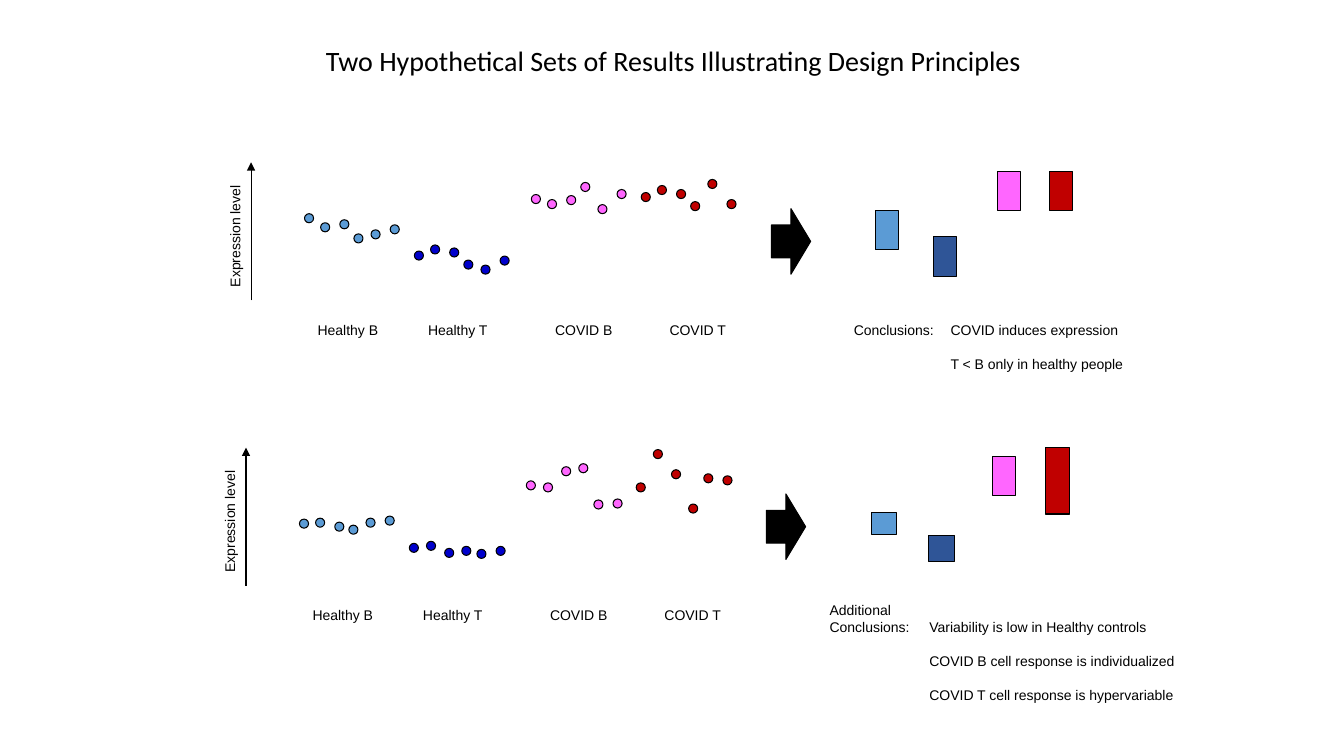
import pptx
import pptx.dml.color
import pptx.enum.shapes
import pptx.enum.text
import pptx.oxml.ns
import pptx.util
from lxml import etree

Inches = pptx.util.Inches
Pt = pptx.util.Pt
Shape = pptx.enum.shapes.MSO_SHAPE
Align = pptx.enum.text.PP_ALIGN
Anchor = pptx.enum.text.MSO_ANCHOR

COLORS = {
    "black": "000000",
    "light blue": "5B9BD5",
    "bright blue": "0000CC",
    "dark blue": "2F5597",
    "pink": "FF66FF",
    "red": "C00000",
}

# name, left of the first dot, centre of the label, dot colour, bar colour
GROUPS = [
    ("Healthy B", 0.53, 0.96, "light blue", "light blue"),
    ("Healthy T", 1.62, 2.05, "bright blue", "dark blue"),
    ("COVID B", 2.78, 3.30, "pink", "pink"),
    ("COVID T", 3.87, 4.43, "red", "red"),
]
EARLY_STEPS = (0, 0.16, 0.35, 0.49, 0.66, 0.85)
EVEN_STEPS = (0, 0.17, 0.35, 0.52, 0.67, 0.86)
DOT_SIZE = 0.09

# Every length in a panel is measured from the top of its axis.
PANELS = [
    {
        "origin": (2.49, 1.61),
        "steps": [EARLY_STEPS] * 4,
        "dots": [
            (0.51, 0.60, 0.57, 0.71, 0.67, 0.62),
            (0.88, 0.82, 0.85, 0.97, 1.02, 0.93),
            (0.32, 0.37, 0.33, 0.20, 0.42, 0.27),
            (0.30, 0.23, 0.27, 0.39, 0.17, 0.37),
        ],
        "bars": [
            (6.19, 0.48, 0.23, 0.39),
            (6.77, 0.74, 0.23, 0.39),
            (7.40, 0.09, 0.23, 0.39),
            (7.92, 0.09, 0.23, 0.39),
        ],
        "heading": (["Conclusions:"], 5.88, 1.53),
        "findings": (
            ["COVID induces expression", "T < B only in healthy people"],
            6.84, 1.53,
        ),
    },
    {
        "origin": (2.44, 4.44),
        "steps": [EARLY_STEPS] + [EVEN_STEPS] * 3,
        "dots": [
            (0.71, 0.70, 0.74, 0.77, 0.70, 0.68),
            (0.95, 0.93, 1.00, 0.98, 1.01, 0.98),
            (0.33, 0.35, 0.19, 0.16, 0.52, 0.51),
            (0.35, 0.02, 0.22, 0.56, 0.26, 0.28),
        ],
        "bars": [
            (6.20, 0.64, 0.25, 0.22),
            (6.77, 0.87, 0.26, 0.26),
            (7.40, 0.09, 0.23, 0.39),
            (7.93, 0, 0.24, 0.66),
        ],
        "heading": (["Additional", "Conclusions:"], 5.69, 1.48),
        "findings": (
            [
                "Variability is low in Healthy controls",
                "COVID B cell response is individualized",
                "COVID T cell response is hypervariable",
            ],
            6.68, 1.65,
        ),
    },
]


def color(name):
    return pptx.dml.color.RGBColor.from_string(COLORS[name])


def add_outlined(shapes, kind, box, fill):
    """Add a filled shape with a thin black outline."""
    shape = shapes.add_shape(kind, *map(Inches, box))
    shape.shadow.inherit = False
    shape.fill.solid()
    shape.fill.fore_color.rgb = color(fill)
    shape.line.color.rgb = color("black")
    shape.line.width = Pt(0.75)
    return shape


def add_text(shapes, lines, box, align=Align.LEFT, gap=0):
    """Add one paragraph per line, with gap points between them."""
    text_box = shapes.add_textbox(*map(Inches, box))
    frame = text_box.text_frame
    frame.word_wrap = True
    frame.text = "\n".join(lines)
    for index, para in enumerate(frame.paragraphs):
        para.alignment = align
        para.space_before = Pt(gap if index else 0)
        para.font.name = "Arial"
        para.font.size = Pt(10)
        para.font.color.rgb = color("black")
    return text_box


def add_axis(shapes, left, top):
    axis = shapes.add_connector(
        pptx.enum.shapes.MSO_CONNECTOR.STRAIGHT,
        Inches(left), Inches(top + 1.37), Inches(left), Inches(top))
    axis.line.color.rgb = color("black")
    axis.line.width = Pt(0.75)
    qn = pptx.oxml.ns.qn
    etree.SubElement(axis.line._get_or_add_ln(), qn("a:tailEnd"), type="triangle")
    etree.SubElement(axis._element.spPr, qn("a:effectLst"))
    caption = add_text(shapes, ["Expression level"],
                       (left - 0.77, top + 0.6, 1.22, 0.27), Align.CENTER)
    caption.rotation = 270


def add_dot_plot(shapes, panel, left, top):
    for group, steps, heights in zip(GROUPS, panel["steps"], panel["dots"]):
        name, start, center, dot_color, _ = group
        for step, height in zip(steps, heights):
            box = (left + start + step, top + height, DOT_SIZE, DOT_SIZE)
            add_outlined(shapes, Shape.OVAL, box, dot_color)
        add_text(shapes, [name], (left + center - 0.55, top + 1.53, 1.1, 0.27),
                 Align.CENTER)


def add_summary(shapes, panel, left, top):
    """Add the arrow, the range bars and the conclusions."""
    add_outlined(shapes, Shape.RIGHT_ARROW,
                 (left + 5.16, top + 0.46, 0.39, 0.65), "black")
    for group, (x, y, width, height) in zip(GROUPS, panel["bars"]):
        add_outlined(shapes, Shape.RECTANGLE,
                     (left + x, top + y, width, height), group[-1])
    heading, x, y = panel["heading"]
    add_text(shapes, heading, (left + x, top + y, 1.1, 0.1 + 0.17 * len(heading)))
    findings, x, y = panel["findings"]
    add_text(shapes, findings,
             (left + x, top + y, 2.8, 0.34 * len(findings) - 0.07), gap=12)


def add_panel(page, panel):
    shapes = page.shapes.add_group_shape().shapes
    left, top = panel["origin"]
    add_axis(shapes, left, top)
    add_dot_plot(shapes, panel, left, top)
    add_summary(shapes, panel, left, top)


def format_title(page, text):
    title = page.shapes.title
    title.left, title.top = Inches(2.43), Inches(0.38)
    title.width, title.height = Inches(8.5), Inches(0.55)
    frame = title.text_frame
    frame.text = text
    frame.word_wrap = True
    frame.vertical_anchor = Anchor.TOP
    para = frame.paragraphs[0]
    para.alignment = Align.CENTER
    para.font.name = "Calibri"
    para.font.size = Pt(20)
    para.font.color.rgb = color("black")


def main():
    deck = pptx.Presentation()
    deck.slide_width, deck.slide_height = Inches(13.33), Inches(7.5)
    page = deck.slides.add_slide(deck.slide_layouts.get_by_name("Title Only"))
    format_title(page, "Two Hypothetical Sets of Results Illustrating Design Principles")
    for panel in PANELS:
        add_panel(page, panel)
    deck.save("out.pptx")


if __name__ == "__main__":
    main()
